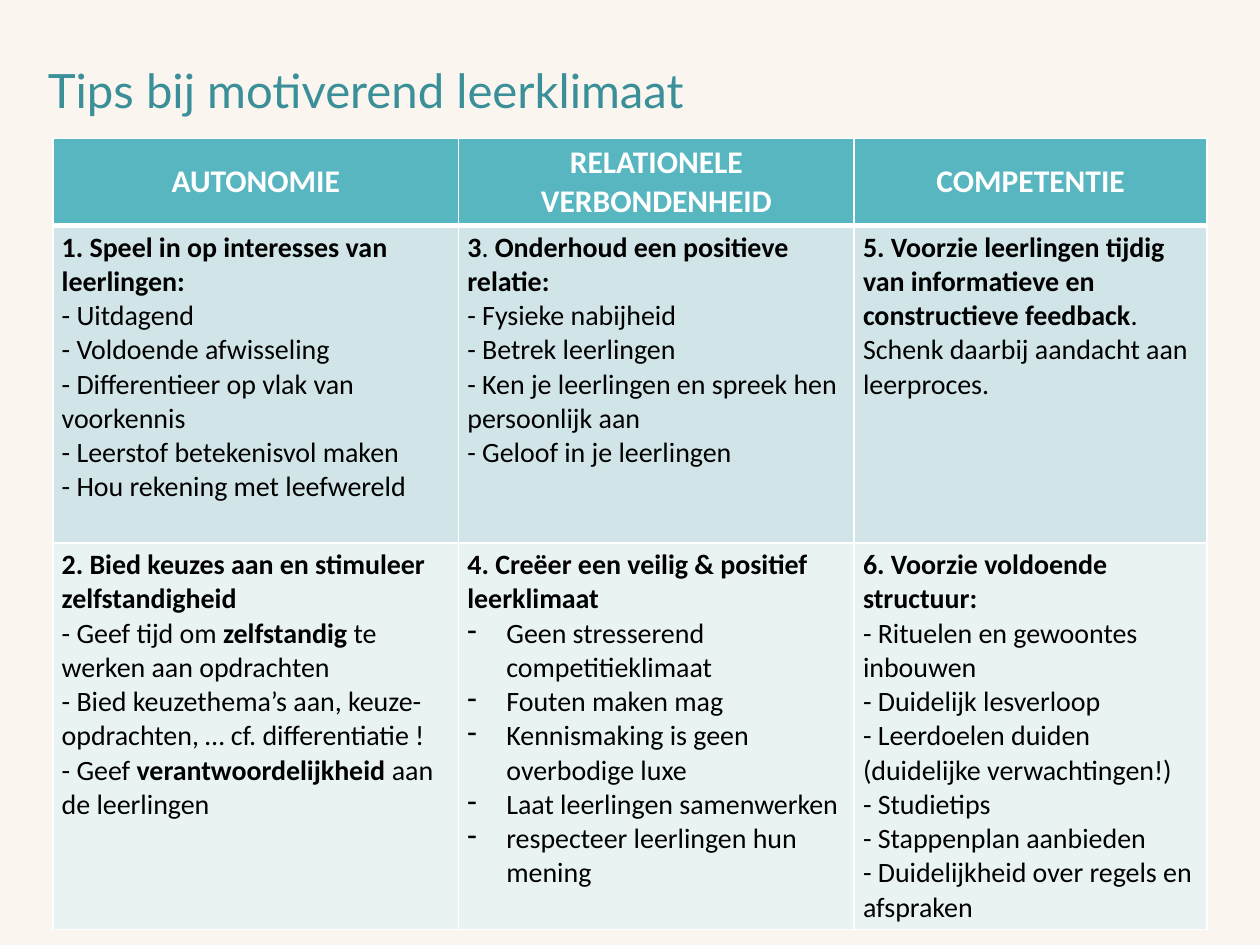
from dataclasses import dataclass

import lxml.etree
import pptx
import pptx.dml.color
import pptx.enum.text
import pptx.oxml.ns
import pptx.util

Inches = pptx.util.Inches
Pt = pptx.util.Pt
RGBColor = pptx.dml.color.RGBColor
qn = pptx.oxml.ns.qn

CREAM = RGBColor(0xFA, 0xF6, 0xEF)
TEAL = RGBColor(0x58, 0xB6, 0xC0)
DARK_TEAL = RGBColor(0x3A, 0x8F, 0x98)
MID_TINT = RGBColor(0xD1, 0xE5, 0xE8)
LIGHT_TINT = RGBColor(0xEA, 0xF3, 0xF4)
WHITE = RGBColor(0xFF, 0xFF, 0xFF)
BLACK = RGBColor(0, 0, 0)
BOLD_MARK = "**"
COLUMN_WIDTHS = (3.22, 3.14, 2.8)


@dataclass(frozen=True)
class Tip:
    heading: str
    lines: tuple[str, ...]
    bulleted: bool = False


@dataclass(frozen=True)
class TipRow:
    height: float
    fill: RGBColor
    tips: tuple[Tip, ...]
    top_border: int = 1


HEADER_HEIGHT = 0.68
HEADERS = ("AUTONOMIE", "RELATIONELE VERBONDENHEID", "COMPETENTIE")
TIP_ROWS = (
    TipRow(2.52, MID_TINT, (
        Tip("**1. Speel in op interesses van leerlingen:**", (
            "- Uitdagend",
            "- Voldoende afwisseling",
            "- Differentieer op vlak van voorkennis",
            "- Leerstof betekenisvol maken",
            "- Hou rekening met leefwereld",
        )),
        Tip("**3**. **Onderhoud een positieve relatie:**", (
            "- Fysieke nabijheid",
            "- Betrek leerlingen",
            "- Ken je leerlingen en spreek hen persoonlijk aan",
            "- Geloof in je leerlingen",
        )),
        Tip("**5. Voorzie leerlingen tijdig van informatieve en constructieve feedback**.", (
            "Schenk daarbij aandacht aan leerproces.",
        )),
    ), top_border=3),
    TipRow(3.06, LIGHT_TINT, (
        Tip("**2. Bied keuzes aan en stimuleer zelfstandigheid**", (
            "- Geef tijd om **zelfstandig** te werken aan opdrachten",
            "- Bied keuzethema’s aan, keuze-opdrachten, … cf. differentiatie !",
            "- Geef **verantwoordelijkheid** aan de leerlingen",
        )),
        Tip("**4. Creëer een veilig & positief leerklimaat**", (
            "Geen stresserend competitieklimaat",
            "Fouten maken mag",
            "Kennismaking is geen overbodige luxe",
            "Laat leerlingen samenwerken",
            "respecteer leerlingen hun mening",
        ), bulleted=True),
        Tip("**6. Voorzie voldoende structuur:**", (
            "- Rituelen en gewoontes inbouwen",
            "- Duidelijk lesverloop",
            "- Leerdoelen duiden (duidelijke verwachtingen!)",
            "- Studietips",
            "- Stappenplan aanbieden",
            "- Duidelijkheid over regels en afspraken",
        )),
    )),
)


def style_run(r, size: float, font: str, color: RGBColor, bold: bool = False) -> None:
    r.font.size = Pt(size)
    r.font.name = font
    r.font.color.rgb = color
    r.font.bold = bold


def add_marked_runs(p, text: str) -> None:
    for i, part in enumerate(text.split(BOLD_MARK)):
        if part:
            r = p.add_run()
            r.text = part
            style_run(r, 16, "Calibri", BLACK, bold=i % 2 == 1)


def add_dash_bullet(p) -> None:
    pPr = p._p.get_or_add_pPr()
    pPr.set("marL", str(Inches(0.31)))
    pPr.set("indent", str(-Inches(0.31)))
    lxml.etree.SubElement(pPr, qn("a:buChar"), char="-")


def style_cell(cell, fill: RGBColor, top: int = 1, bottom: int = 1) -> None:
    cell.margin_left = cell.margin_right = Inches(0.07)
    cell.margin_top = cell.margin_bottom = Inches(0.04)
    tcPr = cell._tc.get_or_add_tcPr()
    for side, width in (("L", 1), ("R", 1), ("T", top), ("B", bottom)):
        ln = lxml.etree.SubElement(tcPr, qn(f"a:ln{side}"), w=str(Pt(width)))
        solid = lxml.etree.SubElement(ln, qn("a:solidFill"))
        lxml.etree.SubElement(solid, qn("a:srgbClr"), val=str(WHITE))
    cell.fill.solid()
    cell.fill.fore_color.rgb = fill


def fill_header(cell, text: str) -> None:
    style_cell(cell, TEAL, bottom=3)
    cell.vertical_anchor = pptx.enum.text.MSO_ANCHOR.MIDDLE
    p = cell.text_frame.paragraphs[0]
    p.text = text
    p.alignment = pptx.enum.text.PP_ALIGN.CENTER
    style_run(p.runs[0], 18, "Calibri", WHITE, bold=True)


def fill_tip(cell, tip: Tip, row: TipRow) -> None:
    style_cell(cell, row.fill, top=row.top_border)
    tf = cell.text_frame
    add_marked_runs(tf.paragraphs[0], tip.heading)
    for line in tip.lines:
        p = tf.add_paragraph()
        if tip.bulleted:
            add_dash_bullet(p)
        add_marked_runs(p, line)


def add_title(s, text: str) -> None:
    sp = s.shapes.title
    sp.left, sp.top = Inches(0.28), Inches(0.47)
    sp.width, sp.height = Inches(8.98), Inches(0.54)
    tf = sp.text_frame
    tf.text = text
    tf.word_wrap = True
    tf.vertical_anchor = pptx.enum.text.MSO_ANCHOR.MIDDLE
    p = tf.paragraphs[0]
    p.alignment = pptx.enum.text.PP_ALIGN.LEFT
    p.line_spacing = 0.9
    style_run(p.runs[0], 27, "Lato", DARK_TEAL)


def add_tips_table(s) -> None:
    heights = (HEADER_HEIGHT, *(row.height for row in TIP_ROWS))
    table = s.shapes.add_table(
        len(heights), len(HEADERS), Inches(0.42), Inches(1.1),
        Inches(sum(COLUMN_WIDTHS)), Inches(sum(heights)),
    ).table
    table.horz_banding = False
    for column, width in zip(table.columns, COLUMN_WIDTHS):
        column.width = Inches(width)
    for table_row, height in zip(table.rows, heights):
        table_row.height = Inches(height)
    for col, text in enumerate(HEADERS):
        fill_header(table.cell(0, col), text)
    for i, row in enumerate(TIP_ROWS, start=1):
        for col, tip in enumerate(row.tips):
            fill_tip(table.cell(i, col), tip, row)


def main() -> None:
    prs = pptx.Presentation()
    prs.slide_width, prs.slide_height = Inches(10), Inches(7.5)
    s = prs.slides.add_slide(prs.slide_layouts[5])
    s.background.fill.solid()
    s.background.fill.fore_color.rgb = CREAM
    add_title(s, "Tips bij motiverend leerklimaat")
    add_tips_table(s)
    prs.save("out.pptx")


if __name__ == "__main__":
    main()
